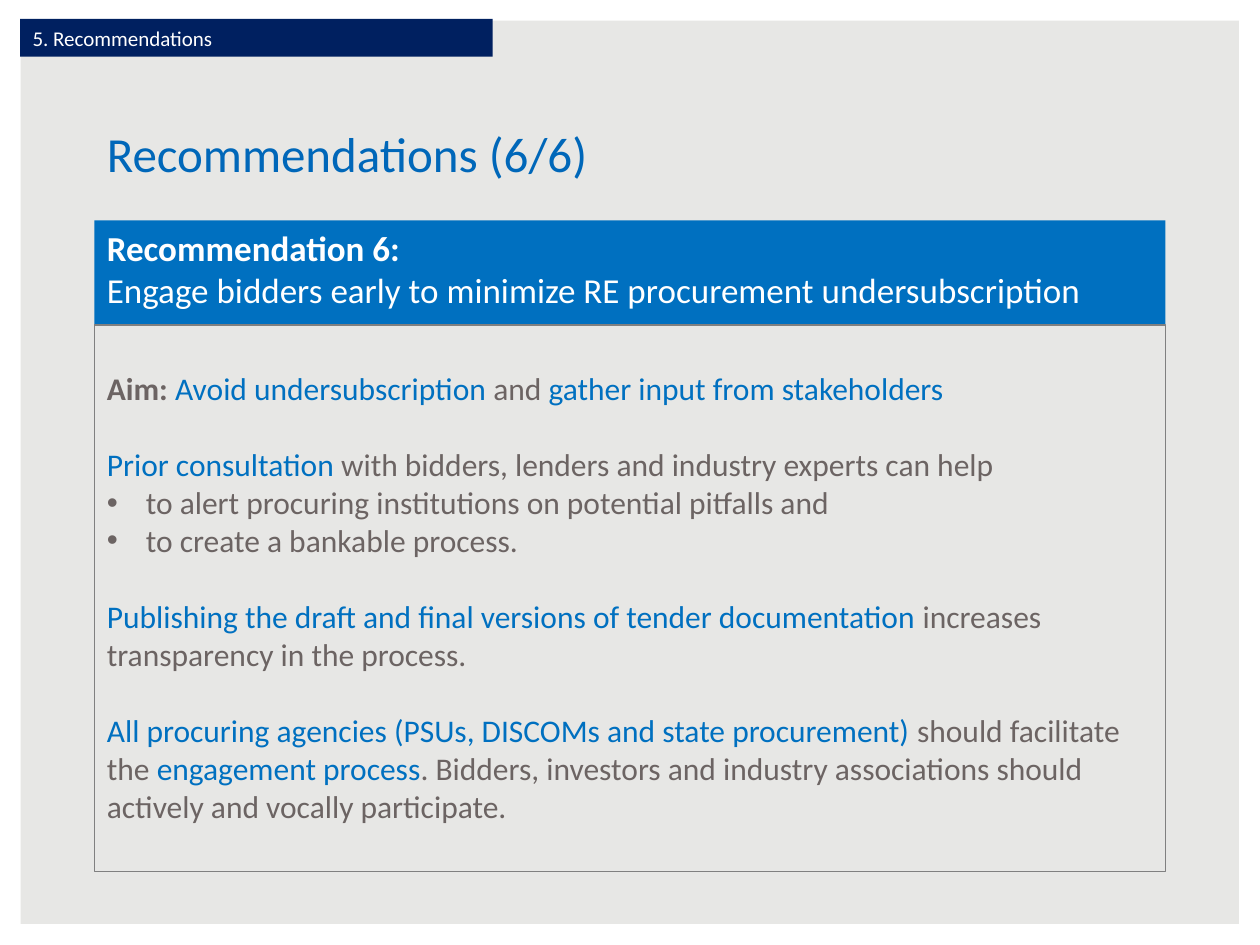
from lxml import etree
from pptx import Presentation
from pptx import util as u
from pptx.dml import color
from pptx.enum import shapes, text
from pptx.oxml import ns

WHITE, NAVY, BLUE, GREY = "FFFFFF", "002060", "0070C0", "6C6463"
LEFT, WIDTH = 0.75, 8.5
BLANK_LINE = 22

BODY = [
    {"runs": [("Aim: ", GREY, True), ("Avoid undersubscription ", BLUE),
              ("and ", GREY), ("gather input from stakeholders", BLUE)]},
    {"runs": [("Prior consultation ", BLUE),
              ("with bidders, lenders and industry experts can help", GREY)],
     "before": BLANK_LINE},
    {"runs": [("to alert procuring institutions on potential pitfalls and", GREY)],
     "bullet": True},
    {"runs": [("to create a bankable process.", GREY)], "bullet": True},
    {"runs": [("Publishing the draft and final versions of tender documentation ", BLUE),
              ("increases transparency in the process.", GREY)],
     "before": BLANK_LINE},
    {"runs": [("All procuring agencies (PSUs, DISCOMs and state procurement) ", BLUE),
              ("should facilitate the ", GREY), ("engagement process", BLUE),
              (". Bidders, investors and industry associations should actively "
               "and vocally participate.", GREY)],
     "before": BLANK_LINE},
]


def rgb(value):
    return color.RGBColor.from_string(value)


def apply_format(target, values):
    for name, value in values.items():
        setattr(target, name, value)


def add_box(slide, kind, bounds, fill=None, line=None):
    shape = slide.shapes.add_shape(kind, *map(u.Inches, bounds))
    shape.shadow.inherit = False
    if fill:
        shape.fill.solid()
        shape.fill.fore_color.rgb = rgb(fill)
    else:
        shape.fill.background()
    if line:
        shape.line.color.rgb = rgb(line)
        shape.line.width = u.Pt(0.75)
    else:
        shape.line.fill.background()
    return shape


def prepare_frame(shape, **values):
    apply_format(shape.text_frame, {
        "word_wrap": True, "vertical_anchor": text.MSO_ANCHOR.TOP, **values})
    return shape.text_frame


def add_bullet(paragraph):
    properties = paragraph._p.get_or_add_pPr()
    indent = u.Inches(0.31)
    properties.set("marL", str(indent))
    properties.set("indent", str(-indent))
    font = etree.SubElement(properties, ns.qn("a:buFont"))
    font.set("typeface", "Arial")
    bullet = etree.SubElement(properties, ns.qn("a:buChar"))
    bullet.set("char", "•")


def add_run(paragraph, words, size, hex_color, bold=False):
    run = paragraph.add_run()
    run.text = words
    apply_format(run.font, {"name": "Calibri", "size": u.Pt(size), "bold": bold})
    run.font.color.rgb = rgb(hex_color)


def write_paragraphs(frame, paragraphs, size):
    for index, content in enumerate(paragraphs):
        paragraph = frame.add_paragraph() if index else frame.paragraphs[0]
        if content.get("bullet"):
            add_bullet(paragraph)
        paragraph.alignment = text.PP_ALIGN.LEFT
        if "before" in content:
            paragraph.space_before = u.Pt(content["before"])
        for run in content["runs"]:
            add_run(paragraph, run[0], size, *run[1:])


def add_section_tab(slide):
    tab = add_box(slide, shapes.MSO_SHAPE.RECTANGLE, (0.16, 0.15, 3.75, 0.3), NAVY)
    write_paragraphs(prepare_frame(tab), [{"runs": [("5. Recommendations", WHITE)]}], 12)


def add_title(slide):
    title = slide.shapes.add_textbox(*map(u.Inches, (LEFT, 0.93, WIDTH, 0.57)))
    frame = prepare_frame(title, vertical_anchor=text.MSO_ANCHOR.BOTTOM)
    write_paragraphs(frame, [{"runs": [("Recommendations (6/6)", "0067B9")]}], 28)


def add_heading(slide):
    heading = add_box(slide, shapes.MSO_SHAPE.RECTANGLE, (LEFT, 1.75, WIDTH, 0.83), BLUE)
    frame = prepare_frame(heading)
    write_paragraphs(frame, [{"runs": [("Recommendation 6:", WHITE, True)]}], 20)
    paragraph = frame.paragraphs[0]
    paragraph.add_line_break()
    add_run(paragraph, "Engage bidders early to minimize RE procurement undersubscription",
            20, WHITE)


def add_body(slide):
    body = add_box(slide, shapes.MSO_SHAPE.RECTANGLE, (LEFT, 2.58, WIDTH, 4.34),
                   line="808080")
    write_paragraphs(prepare_frame(body, margin_top=u.Inches(0.35)), BODY, 18)


def main():
    presentation = Presentation()
    apply_format(presentation, {"slide_width": u.Inches(10), "slide_height": u.Inches(7.5)})
    slide = presentation.slides.add_slide(presentation.slide_layouts[6])
    slide.background.fill.solid()
    slide.background.fill.fore_color.rgb = rgb("E7E7E5")
    border = add_box(slide, shapes.MSO_SHAPE.FRAME, (0, 0, 10, 7.5), WHITE)
    border.adjustments[0] = 0.022
    add_section_tab(slide)
    add_title(slide)
    add_heading(slide)
    add_body(slide)
    presentation.save("out.pptx")


if __name__ == "__main__":
    main()
